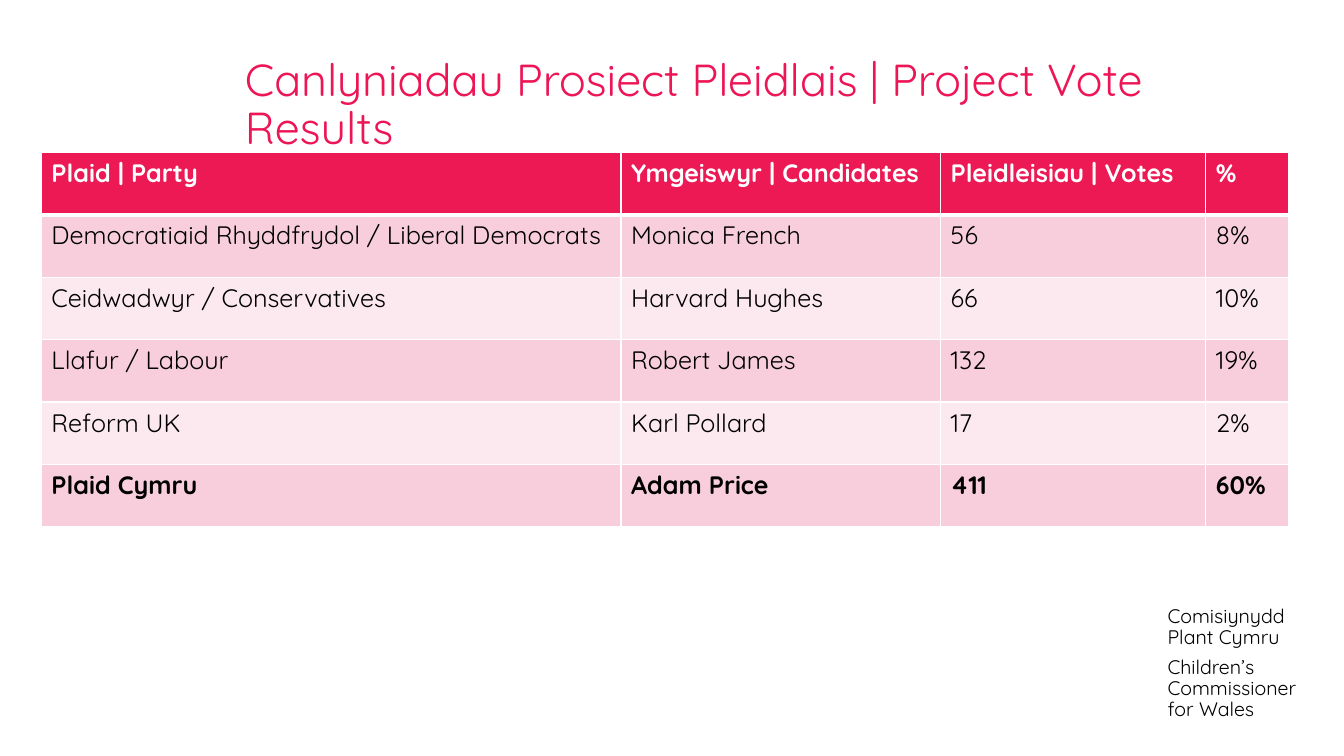
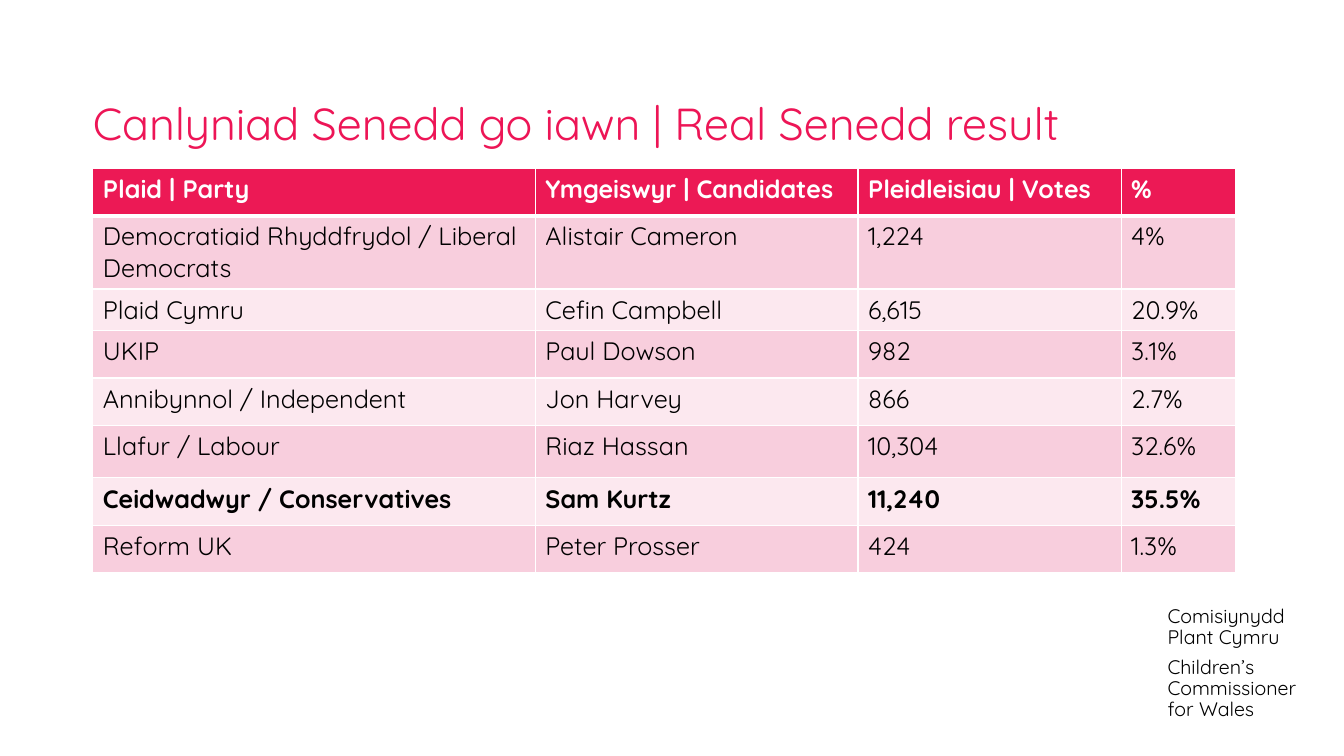
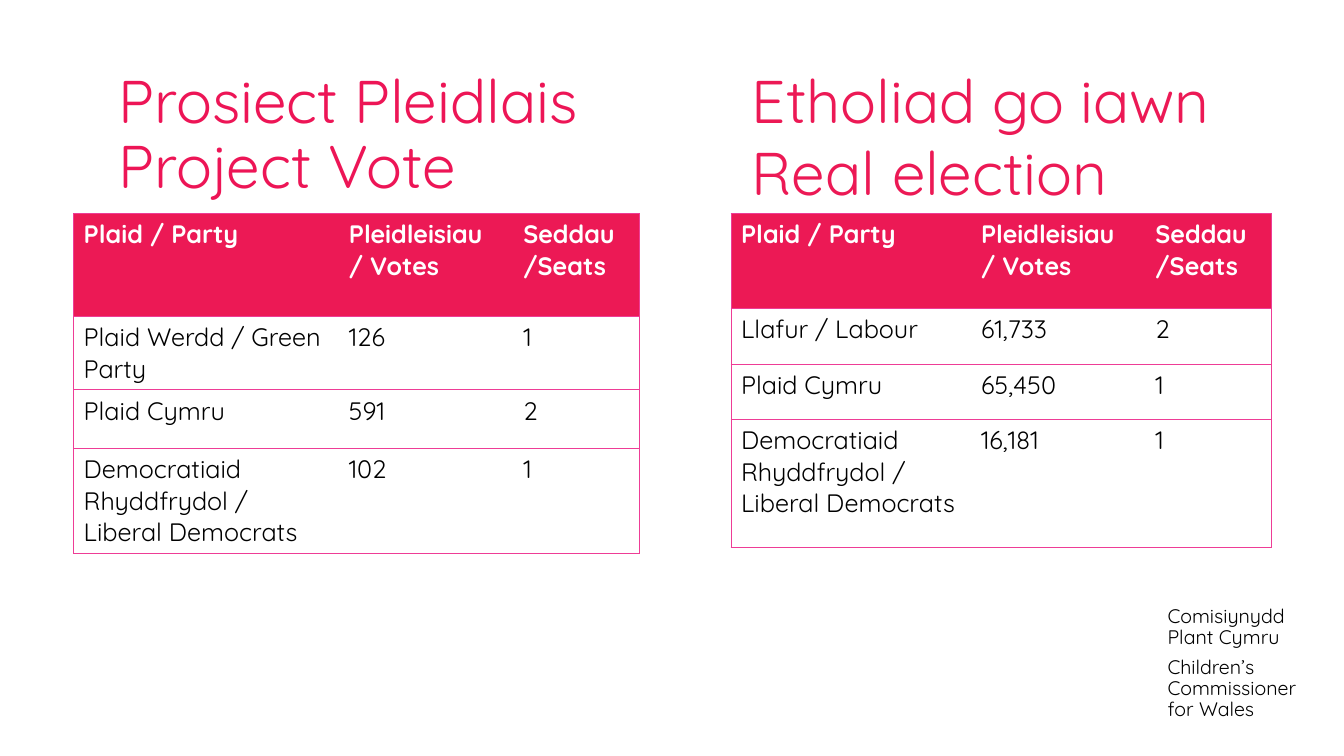
from lxml import etree
from pptx import Presentation
from pptx.dml.color import RGBColor
from pptx.enum.text import MSO_ANCHOR, MSO_AUTO_SIZE, PP_ALIGN
from pptx.oxml.ns import qn
from pptx.util import Inches, Pt

LEFT, TOP, MIDDLE = PP_ALIGN.LEFT, MSO_ANCHOR.TOP, MSO_ANCHOR.MIDDLE
NO_FIT, GROW = MSO_AUTO_SIZE.NONE, MSO_AUTO_SIZE.SHAPE_TO_FIT_TEXT
TITLE_ONLY = 5

THEME = {
    "font": "Quicksand",
    "title": "ED1556", "header": "EC1955", "bands": ("F8CEDD", "FCE8EF"),
    "rule": "EE3D96", "light": "FFFFFF", "dark": "000000",
    "title_pt": 32, "pair_title_pt": 43, "cell_pt": 18, "footer_pt": 14,
    "line_spacing": 0.9,
}

FOOTER = ["Comisiynydd\vPlant Cymru", "Children’s\vCommissioner\vfor Wales"]
RESULT_HEAD = ("Plaid | Party", "Ymgeiswyr | Candidates", "Pleidleisiau | Votes", "%")
SEAT_HEAD = ("Plaid / Party", "Pleidleisiau / Votes", "Seddau /Seats")
LIB_DEMS = "Democratiaid Rhyddfrydol / Liberal Democrats"

SLIDES = [
    {
        "title": "Canlyniadau Prosiect Pleidlais | Project Vote Results",
        "title_at": (2.43, 0.57, 9.41, 0.76),
        "tables": [{
            "at": (0.41, 1.51), "cols": (5.75, 3.17, 2.63, 0.82), "heights": [0.62] * 6,
            "banded": True, "winner": "Plaid Cymru",
            "rows": [
                RESULT_HEAD,
                (LIB_DEMS, "Monica French", "56", "8%"),
                ("Ceidwadwyr / Conservatives", "Harvard Hughes", "66", "10%"),
                ("Llafur / Labour", "Robert James", "132", "19%"),
                ("Reform UK", "Karl Pollard", "17", "2%"),
                ("Plaid Cymru", "Adam Price", "411", "60%"),
            ],
        }],
    },
    {
        "title": "Canlyniad Senedd go iawn | Real Senedd result",
        "title_at": (0.92, 1.01, 11.84, 0.48),
        "tables": [{
            "at": (0.92, 1.67), "cols": (4.39, 3.2, 2.61, 1.14),
            "heights": (0.47, 0.72, 0.4, 0.47, 0.47, 0.52, 0.47, 0.47),
            "banded": True, "winner": "Ceidwadwyr / Conservatives",
            "rows": [
                RESULT_HEAD,
                (LIB_DEMS, "Alistair Cameron", "1,224", "4%"),
                ("Plaid Cymru", "Cefin Campbell", "6,615", "20.9%"),
                ("UKIP", "Paul Dowson", "982", "3.1%"),
                ("Annibynnol / Independent", "Jon Harvey", "866", "2.7%"),
                ("Llafur / Labour", "Riaz Hassan", "10,304", "32.6%"),
                ("Ceidwadwyr / Conservatives", "Sam Kurtz", "11,240", "35.5%"),
                ("Reform UK", "Peter Prosser", "424", "1.3%"),
            ],
        }],
    },
    {
        "title": "Prosiect Pleidlais\vProject Vote",
        "title_at": (1.18, 0.71, 5.17, 0.76), "title_size": "pair_title_pt",
        "second_title": ["Etholiad go iawn", "Real election"],
        "second_at": (7.36, 0.58, 5.03, 1.55),
        "tables": [
            {
                "at": (0.73, 2.12), "cols": (2.63, 1.73, 1.25),
                "heights": (1.02, 0.72, 0.58, 1.04), "banded": False,
                "rows": [
                    SEAT_HEAD,
                    ("Plaid Werdd / Green Party", "126", "1"),
                    ("Plaid Cymru", "591", "2"),
                    (LIB_DEMS, "102", "1"),
                ],
            },
            {
                "at": (7.25, 2.12), "cols": (2.38, 1.73, 1.25),
                "heights": (0.94, 0.55, 0.55, 1.27), "banded": False,
                "rows": [
                    SEAT_HEAD,
                    ("Llafur / Labour", "61,733", "2"),
                    ("Plaid Cymru", "65,450", "1"),
                    (LIB_DEMS, "16,181", "1"),
                ],
            },
        ],
    },
]


def set_attrs(obj, **values):
    for name, value in values.items():
        setattr(obj, name, value)


def write(tf, lines, size, color, bold=False, **paragraph):
    """Fill a text frame with one paragraph per line, all in one style."""
    for i, line in enumerate(lines):
        p = tf.add_paragraph() if i else tf.paragraphs[0]
        p.text = line
        set_attrs(p, alignment=LEFT, **paragraph)
        for r in p.runs:
            set_attrs(r.font, name=THEME["font"], size=Pt(THEME[size]), bold=bold)
            r.font.color.rgb = RGBColor.from_string(THEME[color])


def frame(sp, inset=0.0, **values):
    tf = sp.text_frame
    set_attrs(tf, word_wrap=True, **values)
    if inset is not None:
        set_attrs(tf, **{f"margin_{side}": Inches(inset)
                         for side in ("left", "top", "right", "bottom")})
    return tf


def add_footer(slide, layout):
    """Build the footer once and move it to the layout that all slides share."""
    sp = slide.shapes.add_textbox(*map(Inches, (11.58, 6.01, 1.38, 1.15)))
    tf = frame(sp, vertical_anchor=MIDDLE, auto_size=GROW)
    write(tf, FOOTER, "footer_pt", "dark", line_spacing=THEME["line_spacing"])
    tf.paragraphs[0].space_after = Pt(6)
    layout.shapes.element.append(sp.element)


def add_title(slide, text, at, size="title_pt"):
    sp = slide.shapes.title
    set_attrs(sp, **dict(zip(("left", "top", "width", "height"), map(Inches, at))))
    tf = frame(sp, vertical_anchor=TOP, auto_size=NO_FIT)
    write(tf, [text], size, "title", line_spacing=THEME["line_spacing"])


def set_borders(cell, borders):
    """Draw (colour, points) per side, in schema order; None hides the side."""
    tc_pr = cell._tc.get_or_add_tcPr()
    for i, (side, line) in enumerate(borders.items()):
        ln = etree.Element(qn(f"a:ln{side}"))
        if line:
            color, points = line
            ln.set("w", str(Pt(points)))
            fill = etree.SubElement(ln, qn("a:solidFill"))
            etree.SubElement(fill, qn("a:srgbClr"), val=THEME[color])
        else:
            etree.SubElement(ln, qn("a:noFill"))
        tc_pr.insert(i, ln)


def cell_borders(banded, row, col, last_col):
    if banded:
        thin, thick = ("light", 1), ("light", 3)
        return {"L": thin, "R": thin, "T": thick if row == 1 else thin,
                "B": thick if row == 0 else thin}
    rule = ("rule", 0.5)
    return {"L": rule if col == 0 else None, "R": rule if col == last_col else None,
            "T": rule, "B": rule}


def add_results(slide, at, cols, heights, rows, banded, winner=None):
    size = (sum(cols), sum(heights))
    table = slide.shapes.add_table(len(rows), len(cols), *map(Inches, (*at, *size))).table
    table.horz_banding = False
    for column, width in zip(table.columns, cols):
        column.width = Inches(width)
    for r, (values, height) in enumerate(zip(rows, heights)):
        table.rows[r].height = Inches(height)
        is_head = r == 0
        for c, value in enumerate(values):
            cell = table.cell(r, c)
            write(cell.text_frame, [value], "cell_pt", "light" if is_head else "dark",
                  bold=is_head or values[0] == winner)
            if is_head or banded:
                cell.fill.solid()
                color = THEME["header"] if is_head else THEME["bands"][(r - 1) % 2]
                cell.fill.fore_color.rgb = RGBColor.from_string(color)
            else:
                cell.fill.background()
            set_borders(cell, cell_borders(banded, r, c, len(cols) - 1))


def main():
    prs = Presentation()
    set_attrs(prs, slide_width=Inches(13.33), slide_height=Inches(7.5))
    layout = prs.slide_layouts[TITLE_ONLY]
    for i, content in enumerate(SLIDES):
        slide = prs.slides.add_slide(layout)
        if i == 0:
            add_footer(slide, layout)
        add_title(slide, content["title"], content["title_at"],
                  content.get("title_size", "title_pt"))
        for table in content["tables"]:
            add_results(slide, **table)
        if "second_title" in content:
            sp = slide.shapes.add_textbox(*map(Inches, content["second_at"]))
            write(frame(sp, inset=None, auto_size=GROW), content["second_title"],
                  "pair_title_pt", "header")
    prs.save("out.pptx")


if __name__ == "__main__":
    main()
